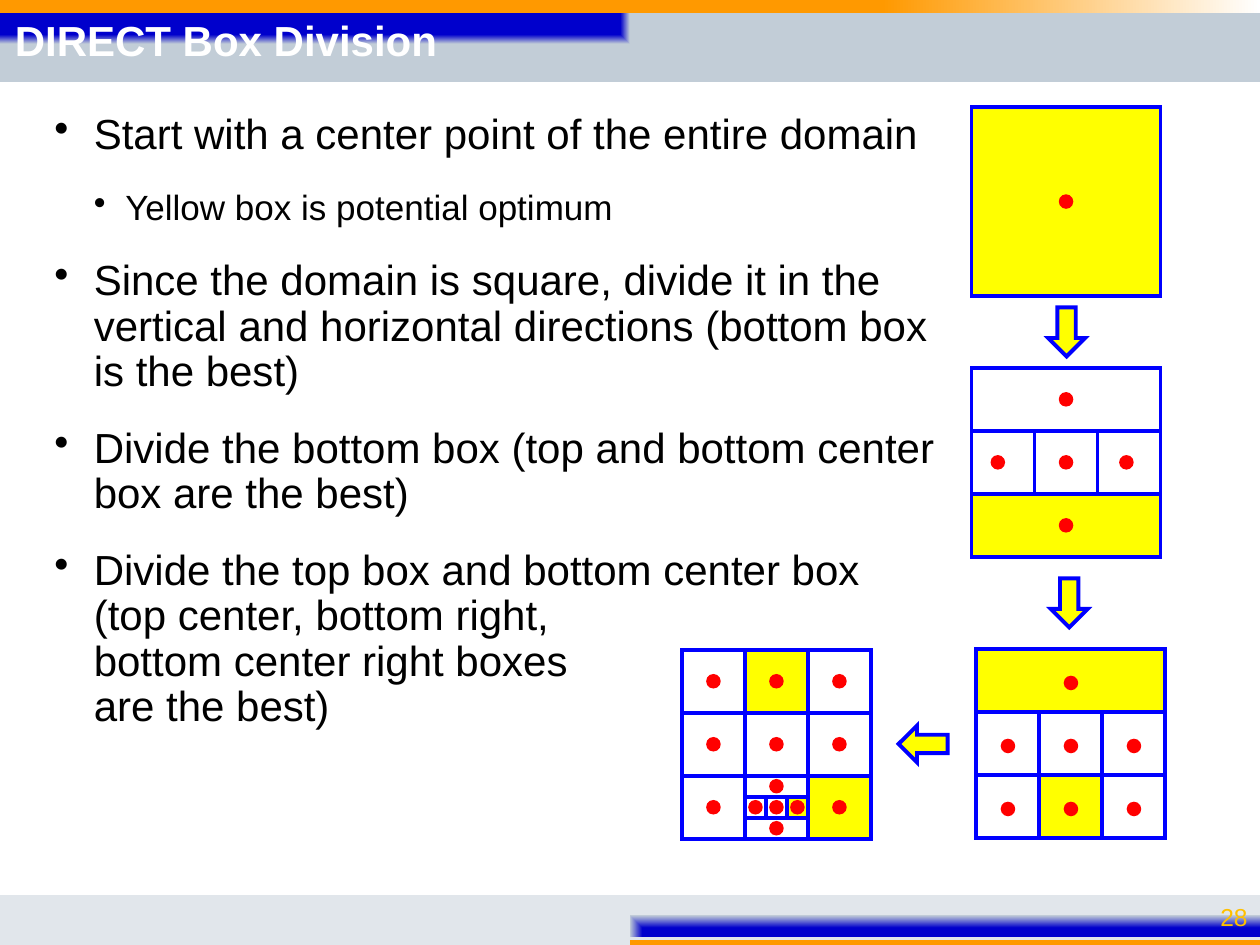
from pptx import Presentation, util as u
from pptx.dml import color
from pptx.enum import shapes, text
from pptx.oxml import parse_xml, ns

BLUE, YELLOW, RED = "0000FF", "FFFF00", "FF0000"
UNIT = 12
BARS = [
    ((0, 3.6, 720, 43.2), [(25, "0000CC"), (75, "0000CC"), (100, "C2CDD7")], (0, 100)),
    ((0, 0, 720, 7.2), [(46, "FF9900"), (70, "FF9900"), (100, "FFFFFF"), (100, "E1E6EB")], None),
    ((0, 534.2, 720, 5.8), [(50, "FF9900"), (93, "FF9900"), (100, "FFFFFF"), (100, "E1E6EB")], (100, 0)),
    ((0, 511.2, 720, 23.8), [(40, "0000CC"), (100, "C2CDD7"), (100, "E1E6EB")], (100, 0)),
]
BULLETS = [
    (0, "Start with a center point of the entire domain"),
    (1, "Yellow box is potential optimum"),
    (0, "Since the domain is square, divide it in the \nvertical and horizontal directions (bottom box\nis the best)"),
    (0, "Divide the bottom box (top and bottom center\nbox are the best)"),
    (0, "Divide the top box and bottom center box \n(top center, bottom right,\nbottom center right boxes \nare the best)"),
]


def rgb(value):
    """Turn a hex string into a colour."""
    return color.RGBColor.from_string(value)


def add_shape(parent, kind, x, y, w, h, fill=None, line=None):
    """Add a preset shape with a solid or empty fill and a mitred outline."""
    sp = parent.add_shape(kind, u.Pt(x), u.Pt(y), u.Pt(w), u.Pt(h))
    sp.shadow.inherit = False
    if fill:
        sp.fill.solid()
        sp.fill.fore_color.rgb = rgb(fill)
    else:
        sp.fill.background()
    if line:
        sp.line.color.rgb = rgb(line)
        sp.line.width = u.Pt(2.25)
        sp.line._get_or_add_ln().append(parse_xml(f'<a:miter {ns.nsdecls("a")} lim="800000"/>'))
    else:
        sp.line.fill.background()
    return sp


def add_bar(s, box, stops, focus):
    """Add a gradient bar, linear or shrinking into a corner."""
    sp = add_shape(s.shapes, shapes.MSO_SHAPE.RECTANGLE, *box)
    marks = "".join(f'<a:gs pos="{pos * 1000}"><a:srgbClr val="{c}"/></a:gs>' for pos, c in stops)
    shade = '<a:lin ang="0" scaled="1"/>'
    if focus:
        near, far = (f * 1000 for f in focus)
        shade = (f'<a:path path="rect"><a:fillToRect l="{near}" t="{near}" '
                 f'r="{far}" b="{far}"/></a:path>')
    old = sp.element.spPr.find(ns.qn("a:noFill"))
    sp.element.spPr.replace(old, parse_xml(
        f'<a:gradFill {ns.nsdecls("a")} rotWithShape="0"><a:gsLst>{marks}</a:gsLst>{shade}</a:gradFill>'))


def add_box(s, x, y, w, h, anchor=text.MSO_ANCHOR.TOP):
    """Add a wrapping text box and return its frame."""
    tf = s.shapes.add_textbox(u.Pt(x), u.Pt(y), u.Pt(w), u.Pt(h)).text_frame
    tf.word_wrap = True
    tf.vertical_anchor = anchor
    return tf


def write(p, content, size, fill, bold=False, align=text.PP_ALIGN.LEFT, spacing=None):
    """Write formatted text with line breaks into a paragraph."""
    p.alignment = align
    p.line_spacing = spacing
    for i, part in enumerate(content.split("\n")):
        if i:
            p.add_line_break()
        r = p.add_run()
        r.text = part
        r.font.name, r.font.size, r.font.bold = "Arial", u.Pt(size), bold
        r.font.color.rgb = rgb(fill)


def add_bullets(s):
    """Add the two-level bullet list."""
    tf = add_box(s, 24, 61.2, 672, 442.8)
    for i, (level, content) in enumerate(BULLETS):
        p = tf.add_paragraph() if i else tf.paragraphs[0]
        p.level = level
        if i:
            p.space_before = u.Pt(18)
        margin, hang = (40.5, 18) if level else (22.5, 22.5)
        pPr = p._p.get_or_add_pPr()
        pPr.set("marL", str(u.Pt(margin)))
        pPr.set("indent", str(-u.Pt(hang)))
        pPr.append(parse_xml(f'<a:buChar {ns.nsdecls("a")} char="•"/>'))
        write(p, content, 20 if level else 24, "000000", spacing=0.9)


def add_panel(s, left, top, cells, drop=0):
    """Add a grouped division of the domain, each cell with its centre point."""
    group = s.shapes.add_group_shape().shapes
    for x, y, w, h, fill, _ in cells:
        add_shape(group, shapes.MSO_SHAPE.RECTANGLE, left + x * UNIT, top + y * UNIT,
                  w * UNIT, h * UNIT, fill, BLUE)
    for x, y, w, h, _, shift in cells:
        add_shape(group, shapes.MSO_SHAPE.OVAL, left + (x + w / 2) * UNIT - 3 + shift,
                  top + (y + h / 2) * UNIT - 3 + drop, 6, 6, RED, RED)


def row(y, best=None, size=3, start=0, shifts=(0, 0, 0)):
    """Return three square cells side by side, the best one yellow."""
    return [(start + i * size, y, size, size, YELLOW if i == best else None, shifts[i])
            for i in range(3)]


def wide(y, fill=None, w=9, h=3, x=0):
    """Return one undivided strip."""
    return [(x, y, w, h, fill, 0)]


def add_arrow(s, x, y, turn=0):
    """Add a yellow block arrow."""
    sp = add_shape(s.shapes, shapes.MSO_SHAPE.DOWN_ARROW, x, y, 21, 28, YELLOW, BLUE)
    sp.rotation = turn


def main():
    """Build and save the slide."""
    prs = Presentation()
    prs.slide_width, prs.slide_height = u.Pt(720), u.Pt(540)
    s = prs.slides.add_slide(prs.slide_layouts[6])
    for bar in BARS:
        add_bar(s, *bar)
    middle = text.MSO_ANCHOR.MIDDLE
    number = add_box(s, 665.3, 513.4, 54.7, 20.9, middle)
    write(number.paragraphs[0], "28", 14, "FFC000", align=text.PP_ALIGN.RIGHT)
    add_bullets(s)
    title = add_box(s, 1.4, 7.9, 718.6, 33.1, middle)
    write(title.paragraphs[0], "DIRECT Box Division", 24, "FFFFFF", bold=True, spacing=0.9)

    add_panel(s, 555.2, 61.2, wide(0, YELLOW, h=9))
    add_panel(s, 555.2, 210.2, wide(0) + row(3, shifts=(-3, 0, -1.5)) + wide(6, YELLOW))
    add_panel(s, 558, 370.8, wide(0, YELLOW) + row(3) + row(6, best=1), drop=1.5)
    corners = [cell for cell in row(6, best=2) if cell[0] != 3]
    center = wide(6, w=3, h=1, x=3) + row(7, best=2, size=1, start=3) + wide(8, w=3, h=1, x=3)
    add_panel(s, 389.7, 371.3, row(0, best=1) + row(3) + corners + center)

    add_arrow(s, 599, 175.7)
    add_arrow(s, 600.5, 330.5)
    add_arrow(s, 517, 411.1, 90)
    prs.save("out.pptx")


if __name__ == "__main__":
    main()
